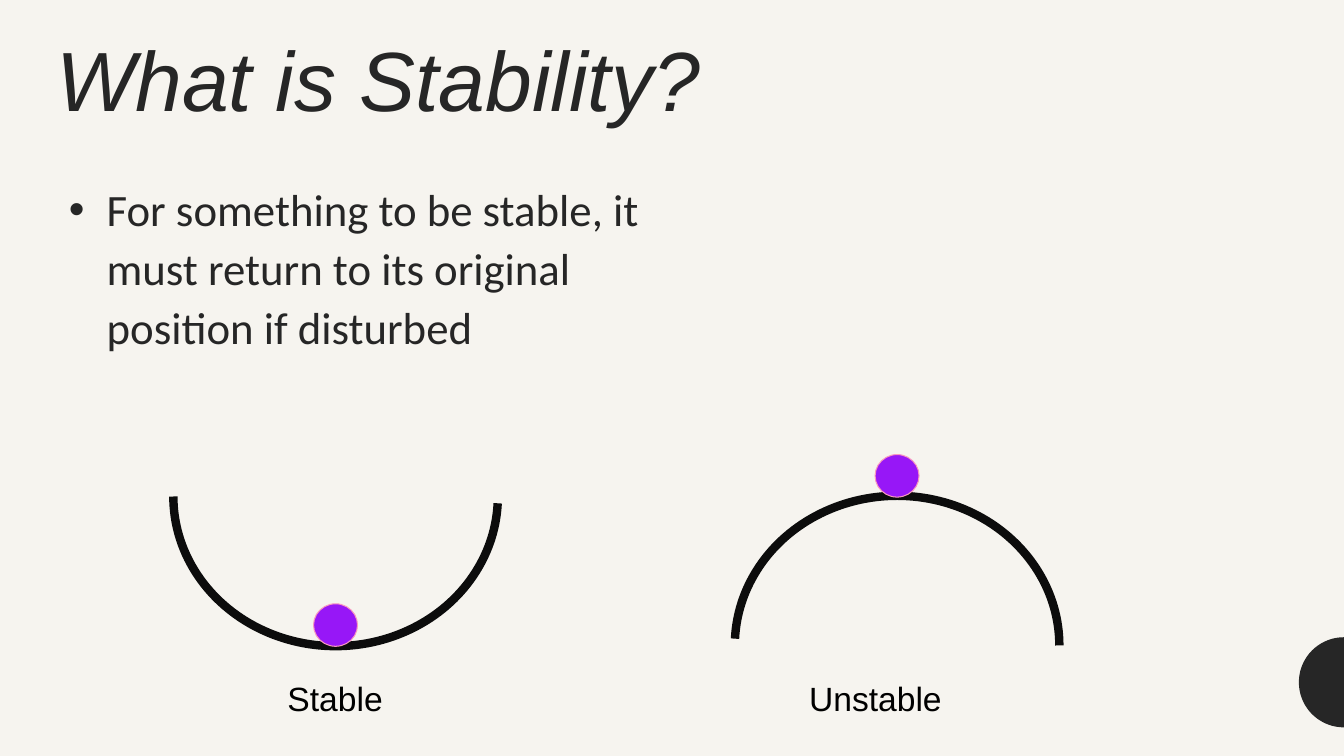
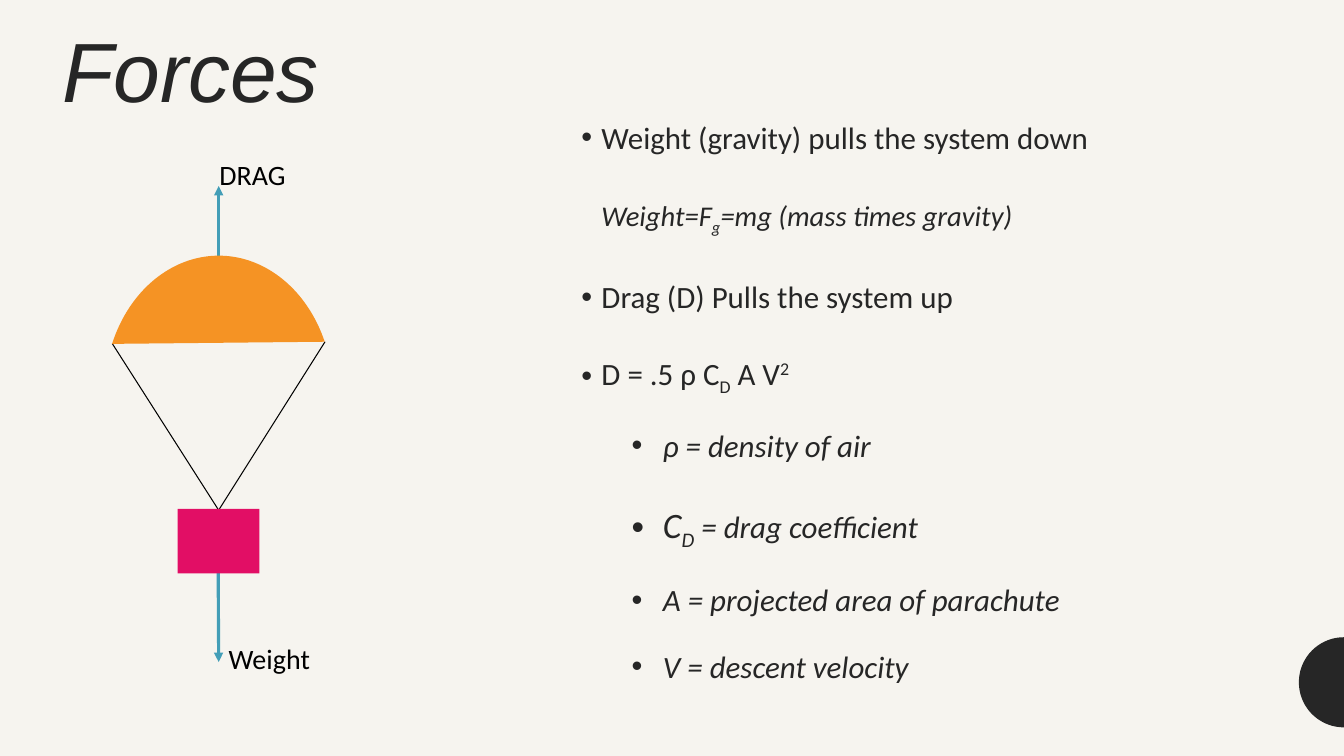
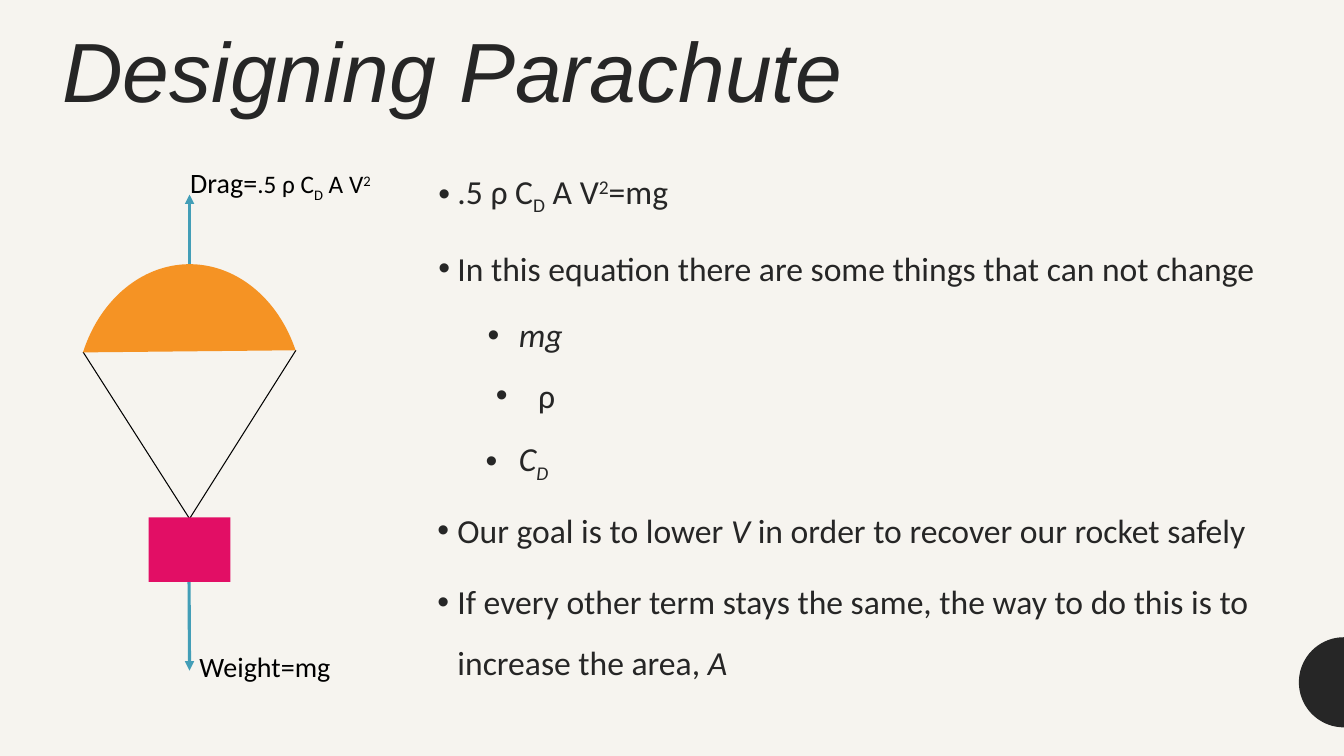
import math
from dataclasses import dataclass

from lxml import etree
from pptx import Presentation
from pptx.dml.color import RGBColor
from pptx.enum import shapes as kinds, text as texts
from pptx.oxml import ns
from pptx.util import Pt


@dataclass(frozen=True)
class Theme:
    background: str = "F6F4EF"
    ink: str = "262626"
    black: str = "000000"
    curve: str = "0C0C0C"
    ball: str = "9717F7"
    ball_edge: str = "F997BF"
    arrow: str = "439EB7"
    canopy: str = "F59324"
    payload: str = "E20E65"
    heading_font: str = "Arial"
    body_font: str = "Calibri"
    title: float = 60
    lead: float = 32
    label: float = 24
    forces: float = 22.1
    formula: float = 20.4
    symbol: float = 25.5
    design: float = 24
    diagram: float = 20
    diagram_formula: float = 18


THEME = Theme()
WIDTH, HEIGHT = 960, 540


@dataclass
class Run:
    text: str
    size: float = None
    italic: bool = None
    baseline: int = 0


@dataclass
class Item:
    """One paragraph: its runs, its left margin and its hanging indent."""
    runs: list
    margin: float = 14.4
    hang: float = 14.4
    before: float = 0
    italic: bool = False
    level: int = 0
    size: float = None


def sub(letter):
    return Run(letter, baseline=-25000)


def sup(letter):
    return Run(letter, baseline=30000)


def sub_item(*runs, margin=58.3, hang=22.3, before=0, italic=True):
    return Item(list(runs), margin, hang, before, italic, level=1)


def drag_formula(size=None):
    return [Run(".5 ρ C", size), Run("D", size, baseline=-25000),
            Run(" A V", size), Run("2", size, baseline=30000)]


# Drawing helpers

def color(value):
    return RGBColor.from_string(value)


def paint(shape, fill=None, line=None, weight=0.75):
    shape.shadow.inherit = False
    if fill:
        shape.fill.solid()
        shape.fill.fore_color.rgb = color(fill)
    else:
        shape.fill.background()
    if line:
        shape.line.color.rgb = color(line)
        shape.line.width = Pt(weight)
    else:
        shape.line.fill.background()
    return shape


def add_shape(shapes, kind, box, adjustments=(), rotation=0, **style):
    shape = shapes.add_shape(kind, *map(Pt, box))
    for index, value in enumerate(adjustments):
        shape.adjustments[index] = value
    shape.rotation = rotation
    return paint(shape, **style)


def add_line(shapes, start, end, stroke, weight, arrow=False):
    connector = shapes.add_connector(
        kinds.MSO_CONNECTOR.STRAIGHT, *map(Pt, start + end))
    connector.line.color.rgb = color(stroke)
    connector.line.width = Pt(weight)
    if arrow:
        line = connector.line._get_or_add_ln()
        etree.SubElement(line, ns.qn("a:tailEnd"), type="triangle")
    etree.SubElement(connector._element.spPr, ns.qn("a:effectLst"))


def set_bullet(paragraph, item):
    properties = paragraph._p.get_or_add_pPr()
    properties.set("marL", str(Pt(item.margin)))
    properties.set("indent", str(-Pt(item.hang)))
    if item.hang:
        bullet_color = etree.SubElement(properties, ns.qn("a:buClr"))
        etree.SubElement(bullet_color, ns.qn("a:srgbClr"), val=THEME.ink)
        etree.SubElement(properties, ns.qn("a:buFont"), typeface="Arial")
        etree.SubElement(properties, ns.qn("a:buChar"), char="•")


def add_text(shapes, box, items, size, font=THEME.body_font, ink=THEME.ink,
             spacing=1.0, align=texts.PP_ALIGN.LEFT):
    frame = shapes.add_textbox(*map(Pt, box)).text_frame
    frame.word_wrap = True
    for index, item in enumerate(items):
        paragraph = frame.add_paragraph() if index else frame.paragraphs[0]
        set_bullet(paragraph, item)
        paragraph.level = item.level
        paragraph.alignment = align
        paragraph.line_spacing = spacing
        paragraph.space_before = Pt(item.before)
        paragraph.font.name = font
        paragraph.font.size = Pt(item.size or size)
        paragraph.font.color.rgb = color(ink)
        paragraph.font.italic = item.italic
        for part in item.runs:
            run = paragraph.add_run()
            run.text = part.text
            if part.size:
                run.font.size = Pt(part.size)
            if part.italic is not None:
                run.font.italic = part.italic
            if part.baseline:
                run._r.get_or_add_rPr().set("baseline", str(part.baseline))


def plain(*runs, italic=False):
    return [Item(list(runs), margin=0, hang=0, italic=italic)]


# Regions

def add_edge_tab(shapes, center_y=487.4, radius=32.2, steps=36):
    """Half disc against the right edge of the slide."""
    points = []
    for step in range(steps + 1):
        angle = math.pi * step / steps
        points.append((Pt(WIDTH - radius * math.sin(angle)),
                       Pt(center_y - radius * math.cos(angle))))
    builder = shapes.build_freeform(*points[0])
    builder.add_line_segments(points[1:], close=True)
    paint(builder.convert_to_shape(), fill=THEME.ink)


def add_base(presentation, title, box):
    slide = presentation.slides.add_slide(presentation.slide_layouts[6])
    add_edge_tab(slide.shapes)
    add_text(slide.shapes, box, plain(Run(title), italic=True), THEME.title,
             font=THEME.heading_font, spacing=0.9)
    return slide.shapes


def add_balance(shapes, arc_box, ball_top, label, label_left, rotation=0):
    """Arc with a ball centred on it and a label below."""
    left, top, width, height = arc_box
    add_shape(shapes, kinds.MSO_SHAPE.ARC, arc_box, (109.441, 0), rotation,
              line=THEME.curve, weight=6)
    ball_width, ball_height = 31.4, 30.4
    add_shape(shapes, kinds.MSO_SHAPE.OVAL,
              (left + (width - ball_width) / 2, ball_top,
               ball_width, ball_height),
              fill=THEME.ball, line=THEME.ball_edge)
    add_text(shapes, (label_left, 481, 206.6, 36), plain(Run(label)),
             THEME.label, font=THEME.heading_font, ink=THEME.black,
             align=texts.PP_ALIGN.CENTER)


def add_parachute(parent, left, top, drag_label, weight_label):
    """Canopy, cords, load and force arrows, relative to left and top."""
    shapes = parent.add_group_shape().shapes

    def at(x, y):
        return left + x, top + y

    axis, span = 76, 152
    # Force arrows
    for start, end in ((at(axis, 109), at(axis, 24)),
                       (at(axis - 0.5, 270), at(axis, 364))):
        add_line(shapes, start, end, THEME.arrow, 2.25, arrow=True)
    # Cords
    for edge in (at(0, 136.5), at(span, 135.2)):
        add_line(shapes, edge, at(axis, 255.5), THEME.black, 0.75)
    # Canopy and load
    add_shape(shapes, kinds.MSO_SHAPE.CHORD,
              at(axis - 98.6, 90.6) + (197.2, 163.4), (69.019, 146.328), 90,
              fill=THEME.canopy)
    add_shape(shapes, kinds.MSO_SHAPE.RECTANGLE,
              at(axis - 29.2, 254.6) + (58.4, 46), fill=THEME.payload)
    # Labels
    for corner, width, runs in ((at(69.4, 0), 177, drag_label),
                                (at(axis, 345.6), 127.4, weight_label)):
        add_text(shapes, corner + (width, 31.6), plain(*runs), THEME.diagram,
                 ink=THEME.black)


# Slides

def build_stability(presentation):
    shapes = add_base(presentation, "What is Stability?",
                      (33.1, 24.5, 893.5, 97.2))
    lead = Item([Run("For something to be stable, it must return to its "
                     "original position if disturbed")],
                margin=36, hang=27, before=4)
    add_text(shapes, (33.1, 122.4, 491.8, 374.4), [lead], THEME.lead,
             spacing=1.1)
    add_balance(shapes, (123.8, 247.7, 231.8, 213.8), 431.3, "Stable", 136.1,
                rotation=180)
    add_balance(shapes, (524.9, 354.2, 231.8, 213.8), 324.7, "Unstable", 522)


def build_forces(presentation):
    shapes = add_base(presentation, "Forces", (37.4, 18, 301.7, 84.2))
    items = [
        Item([Run("Weight (gravity) pulls the system down")]),
        Item([Run("Weight=F"), sub("g"), Run("=mg (mass times gravity)")],
             hang=0, before=8, italic=True, level=1, size=THEME.formula),
        Item([Run("Drag (D) Pulls the system up")], before=8),
        Item([Run("D = ")] + drag_formula(), before=4),
        sub_item(Run("ρ = density of air")),
        sub_item(Run("C", THEME.symbol),
                 Run("D", THEME.symbol, baseline=-25000),
                 Run(" = drag coefficient")),
        sub_item(Run("A = projected area of parachute")),
        sub_item(Run("V = descent velocity")),
    ]
    add_text(shapes, (408.2, 59.8, 491.8, 413.3), items, THEME.forces,
             spacing=1.8)
    add_parachute(shapes, 80.2, 108.9, [Run("DRAG")], [Run("Weight")])


def build_design(presentation):
    shapes = add_base(presentation, "Designing Parachute",
                      (37.4, 18, 802.8, 84.2))
    add_parachute(shapes, 59.4, 115,
                  [Run("Drag=")] + drag_formula(THEME.diagram_formula),
                  [Run("Weight=mg")])
    items = [
        Item(drag_formula() + [Run("=mg")], hang=13.7),
        Item([Run("In this equation there are some things that can not "
                  "change")], hang=13.7, before=8),
        sub_item(Run("mg"), before=4),
        sub_item(Run("ρ"), margin=72, hang=30.2, italic=False),
        sub_item(Run("C"), sub("D"), hang=23.8),
        Item([Run("Our goal is to lower "), Run("V", italic=True),
              Run(" in order to recover our rocket safely")], before=4),
        Item([Run("If every other term stays the same, the way to do this "
                  "is to increase the area, "), Run("A", italic=True)],
             before=8),
    ]
    add_text(shapes, (305.3, 102.2, 672.5, 447.8), items, THEME.design,
             spacing=1.5)


def main():
    presentation = Presentation()
    presentation.slide_width, presentation.slide_height = Pt(WIDTH), Pt(HEIGHT)
    backdrop = presentation.slide_master.background.fill
    backdrop.solid()
    backdrop.fore_color.rgb = color(THEME.background)
    for build in (build_stability, build_forces, build_design):
        build(presentation)
    presentation.save("out.pptx")


if __name__ == "__main__":
    main()
